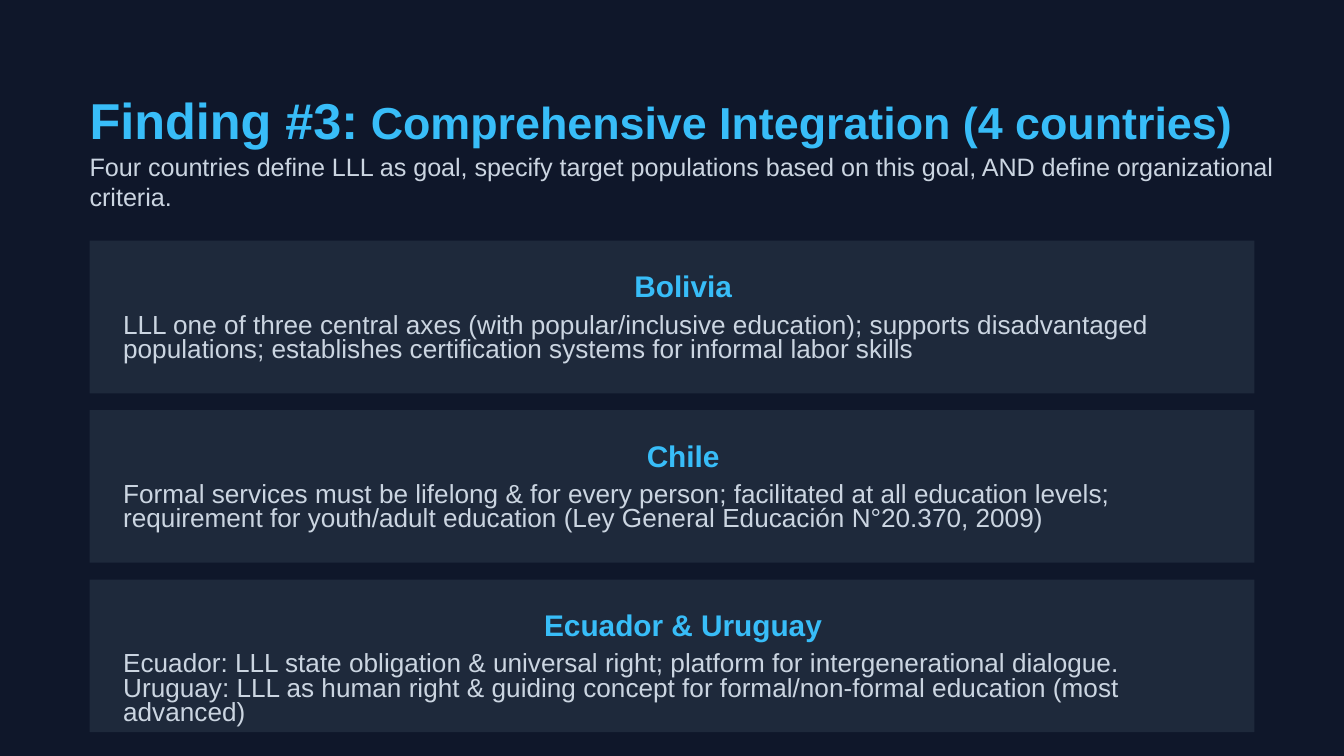
from typing import NamedTuple

from pptx import Presentation
from pptx.dml.color import RGBColor
from pptx.enum.shapes import MSO_SHAPE
from pptx.enum.text import PP_ALIGN
from pptx.util import Pt

PX = 9525
BACKGROUND = RGBColor(0x0F, 0x17, 0x2A)
CARD_FILL = RGBColor(0x1E, 0x29, 0x3B)
ACCENT = RGBColor(0x38, 0xBD, 0xF8)
BODY = RGBColor(0xCB, 0xD5, 0xE1)
RECTANGLE = MSO_SHAPE.RECTANGLE
LEFT, CENTER = PP_ALIGN.LEFT, PP_ALIGN.CENTER

CARD_LEFT, CARD_TOP, CARD_WIDTH, CARD_HEIGHT, CARD_PITCH = 64, 172, 832, 109, 121


class Area(NamedTuple):
    left: int
    top: int
    width: int
    height: int

    def emu(self) -> list[int]:
        return [length * PX for length in self]


class Span(NamedTuple):
    text: str
    size: float
    color: RGBColor
    bold: bool = False


class Country(NamedTuple):
    name: str
    finding: str


COUNTRIES = [
    Country(
        "Bolivia",
        "LLL one of three central axes (with popular/inclusive education); "
        "supports disadvantaged populations; establishes certification systems "
        "for informal labor skills",
    ),
    Country(
        "Chile",
        "Formal services must be lifelong & for every person; facilitated at all "
        "education levels; requirement for youth/adult education "
        "(Ley General Educación N°20.370, 2009)",
    ),
    Country(
        "Ecuador & Uruguay",
        "Ecuador: LLL state obligation & universal right; platform for "
        "intergenerational dialogue. Uruguay: LLL as human right & guiding concept "
        "for formal/non-formal education (most advanced)",
    ),
]


def set_format(target, values: dict) -> None:
    for name, value in values.items():
        setattr(target, name, value)


def add_text(page, area: Area, spans: list[Span],
             spacing: float | None = None, alignment=LEFT) -> None:
    frame = page.shapes.add_textbox(*area.emu()).text_frame
    set_format(frame, {"word_wrap": True, "margin_left": 0, "margin_top": 0,
                       "margin_right": 0, "margin_bottom": 0})
    para = frame.paragraphs[0]
    para.alignment = alignment
    if spacing is not None:
        para.line_spacing = Pt(spacing)
    for span in spans:
        run = para.add_run()
        run.text = span.text
        set_format(run.font, {"name": "Arial", "size": Pt(span.size), "bold": span.bold})
        run.font.color.rgb = span.color


def add_card(page, top: int) -> None:
    area = Area(CARD_LEFT, top, CARD_WIDTH, CARD_HEIGHT)
    card = page.shapes.add_shape(RECTANGLE, *area.emu())
    card.shadow.inherit = False
    card.fill.solid()
    card.fill.fore_color.rgb = CARD_FILL
    card.line.fill.background()


def add_country(page, top: int, country: Country) -> None:
    add_text(page, Area(CARD_LEFT + 24, top + 24, 800, 21),
             [Span(country.name, 16, ACCENT, True)], 15.8, CENTER)
    add_text(page, Area(CARD_LEFT + 24, top + 53, 784, 32),
             [Span(country.finding, 14, BODY)], 13)


def main() -> None:
    deck = Presentation()
    set_format(deck, {"slide_width": 960 * PX, "slide_height": 540 * PX})
    page = deck.slides.add_slide(deck.slide_layouts[6])
    page.background.fill.solid()
    page.background.fill.fore_color.rgb = BACKGROUND

    tops = [CARD_TOP + index * CARD_PITCH for index in range(len(COUNTRIES))]
    for top in tops:
        add_card(page, top)
    add_text(page, Area(64, 64, 832, 84),
             [Span("Finding #3:", 27, ACCENT, True),
              Span(" Comprehensive Integration (4 countries)", 24, ACCENT, True)], 32.4)
    add_text(page, Area(64, 108, 849, 48),
             [Span("Four countries define LLL as goal, specify target populations based "
                   "on this goal, AND define organizational criteria.", 13.5, BODY)])
    for top, country in zip(tops, COUNTRIES):
        add_country(page, top, country)

    deck.save("out.pptx")


if __name__ == "__main__":
    main()
